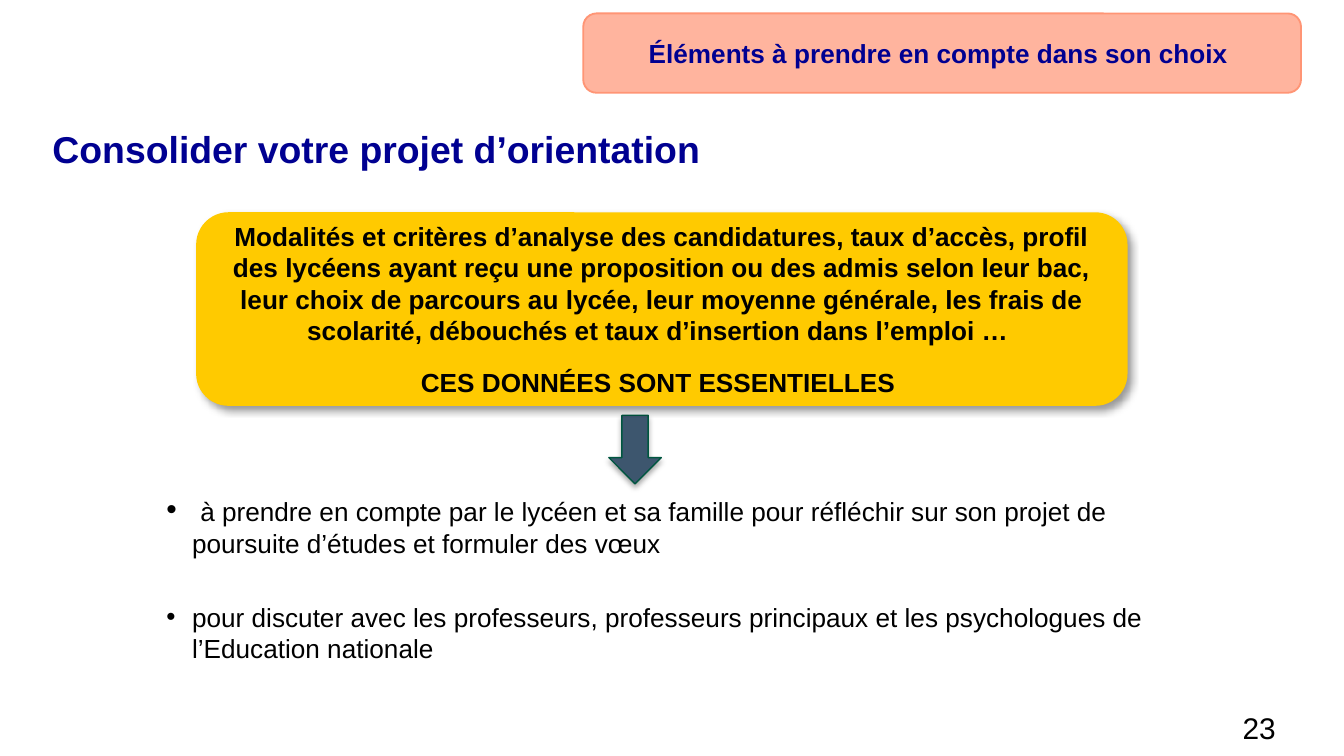
"""Build the slide on consolidating an orientation project."""
from dataclasses import dataclass
from typing import Optional

from lxml.etree import SubElement
from pptx import Presentation
from pptx.dml.color import RGBColor
from pptx.enum.shapes import MSO_SHAPE as Shape
from pptx.enum.text import MSO_ANCHOR as Anchor, PP_ALIGN as Align
from pptx.oxml.ns import qn
from pptx.util import Inches, Pt

NAVY = RGBColor(0x00, 0x00, 0x91)
BLACK = RGBColor(0x00, 0x00, 0x00)
YELLOW = RGBColor(0xFF, 0xCA, 0x00)
SALMON = RGBColor(0xFF, 0x95, 0x75)
SLATE = RGBColor(0x3D, 0x56, 0x6E)
GREEN = RGBColor(0x00, 0x56, 0x40)
FONT = "Arial"


@dataclass
class Shadow:
    """Outer shadow: percent, points, points and degrees."""
    opacity: int
    blur: float
    dist: float
    angle: int


@dataclass
class Block:
    """Filled preset shape with optional centred bold text."""
    kind: Shape
    box: tuple[float, float, float, float]
    fill: RGBColor
    opacity: int = 100
    line: Optional[RGBColor] = None
    line_width: float = 1
    shadow: Optional[Shadow] = None
    color: RGBColor = BLACK
    texts: tuple[str, ...] = ()
    gap: float = 0


BLOCKS = [
    Block(Shape.DOWN_ARROW, (4.53, 3.09, 0.39, 0.51), SLATE, line=GREEN,
          line_width=0.75, shadow=Shadow(35, 3.1, 1.8, 90)),
    Block(Shape.ROUNDED_RECTANGLE, (1.46, 1.58, 6.93, 1.44), YELLOW,
          shadow=Shadow(40, 4, 3, 45), gap=11, texts=(
              "Modalités et critères d’analyse des candidatures, taux d’accès, "
              "profil des lycéens ayant reçu une proposition ou des admis selon "
              "leur bac, leur choix de parcours au lycée, leur moyenne générale, "
              "les frais de scolarité, débouchés et taux d’insertion dans l’emploi … ",
              "CES DONNÉES SONT ESSENTIELLES ")),
    Block(Shape.ROUNDED_RECTANGLE, (4.34, 0.1, 5.34, 0.59), SALMON, opacity=70,
          line=SALMON, color=NAVY,
          texts=("Éléments à prendre en compte dans son choix ",)),
]

BULLETS = [
    [(" ", 16), ("à prendre en compte par le lycéen et sa famille pour réfléchir "
                 "sur son projet de poursuite d’études et formuler des vœux", 14)],
    [("pour discuter avec les professeurs, professeurs principaux et les "
      "psychologues de l’Education nationale", 14)],
]


def add_run(p, text: str, size: float, color: RGBColor = BLACK, bold: bool = False) -> None:
    """Append one formatted run."""
    r = p.add_run()
    r.text = text
    r.font.name, r.font.size, r.font.bold = FONT, Pt(size), bold
    r.font.color.rgb = color


def nth_paragraph(tf, index: int, gap: float):
    """Return the first paragraph, or a new one spaced from the last."""
    if index == 0:
        return tf.paragraphs[0]
    p = tf.add_paragraph()
    p.space_before = Pt(gap)
    return p


def add_alpha(color_element, percent: int) -> None:
    """Set the opacity of a colour element."""
    SubElement(color_element, qn("a:alpha"), val=str(percent * 1000))


def add_shadow(sp, shadow: Shadow) -> None:
    """Give a shape an outer shadow."""
    effects = sp._element.spPr.find(qn("a:effectLst"))
    outer = SubElement(effects, qn("a:outerShdw"), blurRad=str(Pt(shadow.blur)),
                       dist=str(Pt(shadow.dist)), dir=str(shadow.angle * 60000),
                       algn="ctr", rotWithShape="0")
    add_alpha(SubElement(outer, qn("a:srgbClr"), val=str(BLACK)), shadow.opacity)


def add_block(s, block: Block) -> None:
    """Draw one filled shape."""
    sp = s.shapes.add_shape(block.kind, *map(Inches, block.box))
    sp.shadow.inherit = False
    sp.fill.solid()
    sp.fill.fore_color.rgb = block.fill
    if block.opacity < 100:
        add_alpha(sp._element.spPr.find(qn("a:solidFill"))[0], block.opacity)
    if block.line is None:
        sp.line.fill.background()
    else:
        sp.line.color.rgb = block.line
        sp.line.width = Pt(block.line_width)
    if block.shadow:
        add_shadow(sp, block.shadow)
    tf = sp.text_frame
    tf.word_wrap, tf.vertical_anchor = True, Anchor.MIDDLE
    for i, text in enumerate(block.texts):
        p = nth_paragraph(tf, i, block.gap)
        p.alignment = Align.CENTER
        add_run(p, text, 14, block.color, bold=True)


def add_text_frame(s, *box: float):
    """Add a wrapping text box and return its frame."""
    tf = s.shapes.add_textbox(*map(Inches, box)).text_frame
    tf.word_wrap = True
    return tf


def add_title(s, text: str) -> None:
    """Place and format the title placeholder."""
    sp = s.shapes.title
    sp.left, sp.top, sp.width, sp.height = map(Inches, (0.39, 0.98, 9.21, 0.79))
    tf = sp.text_frame
    tf.margin_left = tf.margin_right = tf.margin_top = tf.margin_bottom = 0
    tf.word_wrap, tf.vertical_anchor = True, Anchor.TOP
    p = tf.paragraphs[0]
    p.alignment, p.line_spacing = Align.LEFT, 0.9
    add_run(p, text, 20, NAVY, bold=True)


def add_bullets(s) -> None:
    """Add the bulleted list."""
    tf = add_text_frame(s, 1.14, 3.61, 7.48, 1.41)
    for i, runs in enumerate(BULLETS):
        p = nth_paragraph(tf, i, 22.5)
        pPr = p._p.get_or_add_pPr()
        pPr.set("marL", str(Inches(0.19)))
        pPr.set("indent", str(-Inches(0.19)))
        SubElement(pPr, qn("a:buFont"), typeface=FONT)
        SubElement(pPr, qn("a:buChar"), char="•")
        for text, size in runs:
            add_run(p, text, size)


def main() -> None:
    """Build and save the slide."""
    prs = Presentation()
    prs.slide_width = Inches(10)
    prs.slide_height = prs.slide_width * 9 // 16
    s = prs.slides.add_slide(prs.slide_layouts[5])
    add_title(s, "Consolider votre projet d’orientation")
    p = add_text_frame(s, 8.31, 5.23, 1.28, 0.39).paragraphs[0]
    p.alignment = Align.RIGHT
    add_run(p, "23", 16)
    add_bullets(s)
    for block in BLOCKS:
        add_block(s, block)
    prs.save("out.pptx")


if __name__ == "__main__":
    main()
